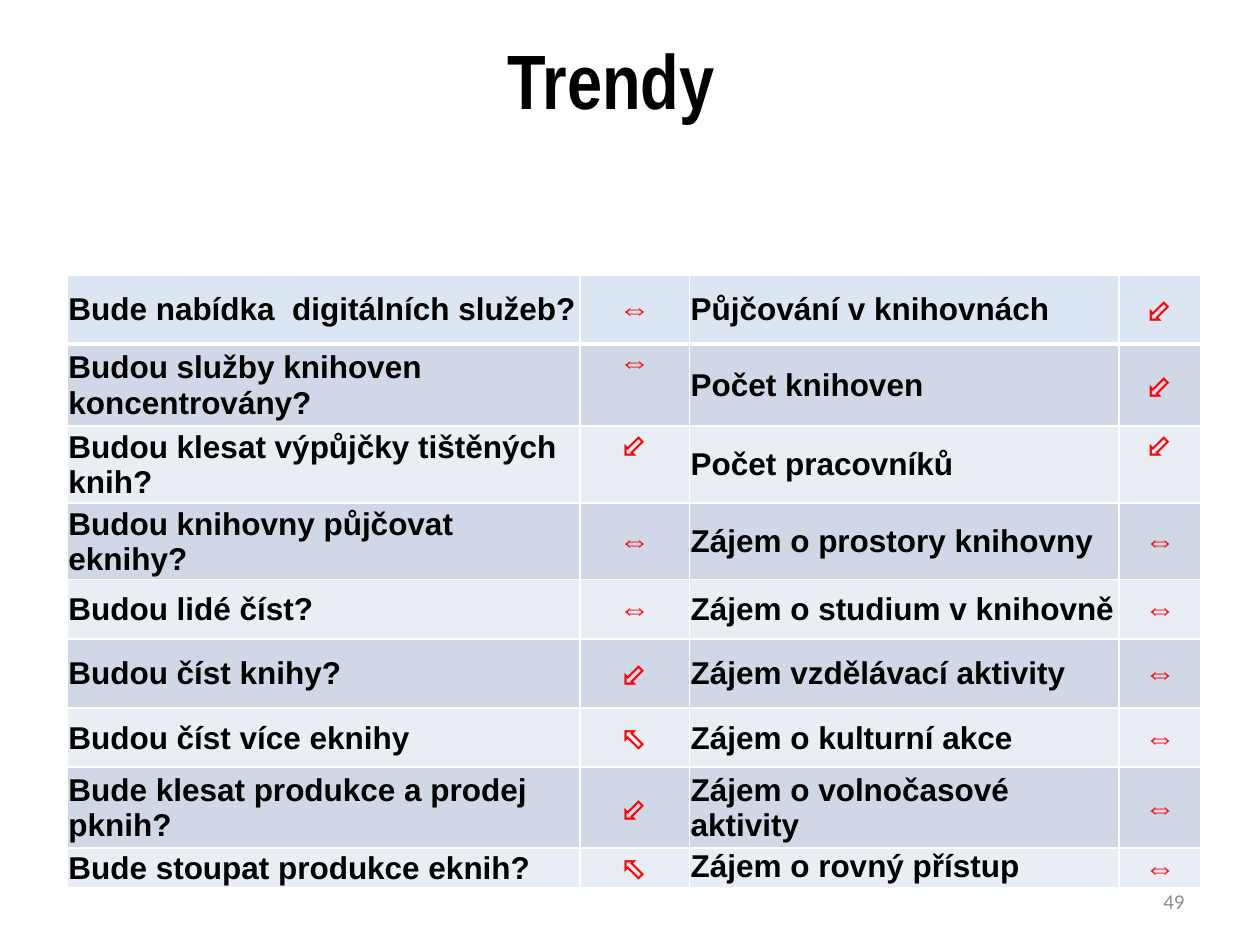
"""Build the "Trendy" slide: a table of library trends with direction arrows."""
from typing import NamedTuple

from lxml import etree
from pptx import Presentation
from pptx import util as u
from pptx.dml.color import RGBColor
from pptx.enum import text
from pptx.oxml.ns import qn

BLACK = RGBColor(0x00, 0x00, 0x00)
RED = RGBColor(0xFF, 0x00, 0x00)
GREY = RGBColor(0x8C, 0x8C, 0x8C)
WHITE = RGBColor(0xFF, 0xFF, 0xFF)
HEADER_FILL = RGBColor(0xDC, 0xE6, 0xF2)
DARK_BAND = RGBColor(0xD0, 0xD8, 0xE8)
LIGHT_BAND = RGBColor(0xE9, 0xED, 0xF4)

LEFT, CENTER, RIGHT = text.PP_ALIGN.LEFT, text.PP_ALIGN.CENTER, text.PP_ALIGN.RIGHT
TOP, MIDDLE = text.MSO_ANCHOR.TOP, text.MSO_ANCHOR.MIDDLE

STEADY, DOWN, UP = "⇔", "⬃", "⬁"
COLUMN_WIDTHS = (293, 62.6, 245.5, 46.8)


class Trend(NamedTuple):
    height: float
    question: str
    answer: str
    topic: str
    direction: str
    top_columns: tuple[int, ...] = ()


TRENDS = (
    Trend(39.6, "Bude nabídka  digitálních služeb?", STEADY, "Půjčování v knihovnách", DOWN),
    Trend(46.8, "Budou služby knihoven koncentrovány?", STEADY, "Počet knihoven", DOWN, (1,)),
    Trend(26.6, "Budou klesat výpůjčky tištěných knih?", DOWN, "Počet pracovníků", DOWN, (1, 3)),
    Trend(33.8, "Budou knihovny půjčovat eknihy?", STEADY, "Zájem o prostory knihovny", STEADY),
    Trend(33.8, "Budou lidé číst?", STEADY, "Zájem o studium v knihovně", STEADY),
    Trend(39.6, "Budou číst knihy?", DOWN, "Zájem vzdělávací aktivity", STEADY),
    Trend(33.8, "Budou číst více eknihy", UP, "Zájem o kulturní akce", STEADY),
    Trend(46.1, "Bude klesat produkce a prodej pknih?", DOWN, "Zájem o volnočasové aktivity", STEADY),
    Trend(23, "Bude stoupat produkce eknih?", UP, "Zájem o rovný přístup", STEADY, (2,)),
)


def write(frame, content: str, *, size: float = 18, font: str = "Arial",
          color: RGBColor = BLACK, bold: bool = True, align=LEFT) -> None:
    """Put one formatted paragraph into a text frame."""
    frame.word_wrap = True
    para = frame.paragraphs[0]
    para.alignment = align
    span = para.add_run()
    span.text = content
    span.font.size = u.Pt(size)
    span.font.name = font
    span.font.bold = bold
    span.font.color.rgb = color


def add_text(page, left: float, top: float, width: float, height: float,
             content: str, **style) -> None:
    """Add a vertically centred text box."""
    box = page.shapes.add_textbox(u.Pt(left), u.Pt(top), u.Pt(width), u.Pt(height))
    box.text_frame.vertical_anchor = MIDDLE
    write(box.text_frame, content, **style)


def set_borders(cell, top: float, bottom: float) -> None:
    """Draw white cell borders, one point wide at the sides."""
    properties = cell._tc.get_or_add_tcPr()
    for side, width in (("L", 1), ("R", 1), ("T", top), ("B", bottom)):
        line = etree.SubElement(properties, qn(f"a:ln{side}"), w=str(u.Pt(width)))
        fill = etree.SubElement(line, qn("a:solidFill"))
        etree.SubElement(fill, qn("a:srgbClr"), val=str(WHITE))


def row_fill(index: int) -> RGBColor:
    """Return the header colour or the band colour of a row."""
    if index == 0:
        return HEADER_FILL
    return DARK_BAND if index % 2 else LIGHT_BAND


def fill_row(table, index: int, trend: Trend) -> None:
    """Write and format one row of trends."""
    table.rows[index].height = u.Pt(trend.height)
    values = (trend.question, trend.answer, trend.topic, trend.direction)
    for column, value in enumerate(values):
        cell = table.cell(index, column)
        cell.margin_left = cell.margin_right = cell.margin_top = u.Pt(0.7)
        cell.margin_bottom = u.Pt(0)
        cell.vertical_anchor = TOP if column in trend.top_columns else MIDDLE
        set_borders(cell, top=3 if index == 1 else 1, bottom=3 if index == 0 else 1)
        cell.fill.solid()
        cell.fill.fore_color.rgb = row_fill(index)
        is_arrow = column % 2 == 1
        write(cell.text_frame, value, color=RED if is_arrow else BLACK,
              align=CENTER if is_arrow else LEFT)


def add_trend_table(page) -> None:
    """Add the table of all trends."""
    frame = page.shapes.add_table(
        len(TRENDS), len(COLUMN_WIDTHS), u.Pt(38.4), u.Pt(157),
        u.Pt(sum(COLUMN_WIDTHS)), u.Pt(sum(trend.height for trend in TRENDS)))
    for column, width in zip(frame.table.columns, COLUMN_WIDTHS):
        column.width = u.Pt(width)
    for index, trend in enumerate(TRENDS):
        fill_row(frame.table, index, trend)


def main() -> None:
    """Build and save the deck."""
    deck = Presentation()
    deck.slide_width, deck.slide_height = u.Pt(720), u.Pt(540)
    page = deck.slides.add_slide(deck.slide_layouts[6])
    add_text(page, 14.4, 0, 669.6, 90, "Trendy", size=44, font="Arial Narrow", align=CENTER)
    add_trend_table(page)
    add_text(page, 516, 500.5, 168, 28.75, "49", size=12, font="Calibri",
             color=GREY, bold=False, align=RIGHT)
    deck.save("out.pptx")


if __name__ == "__main__":
    main()
